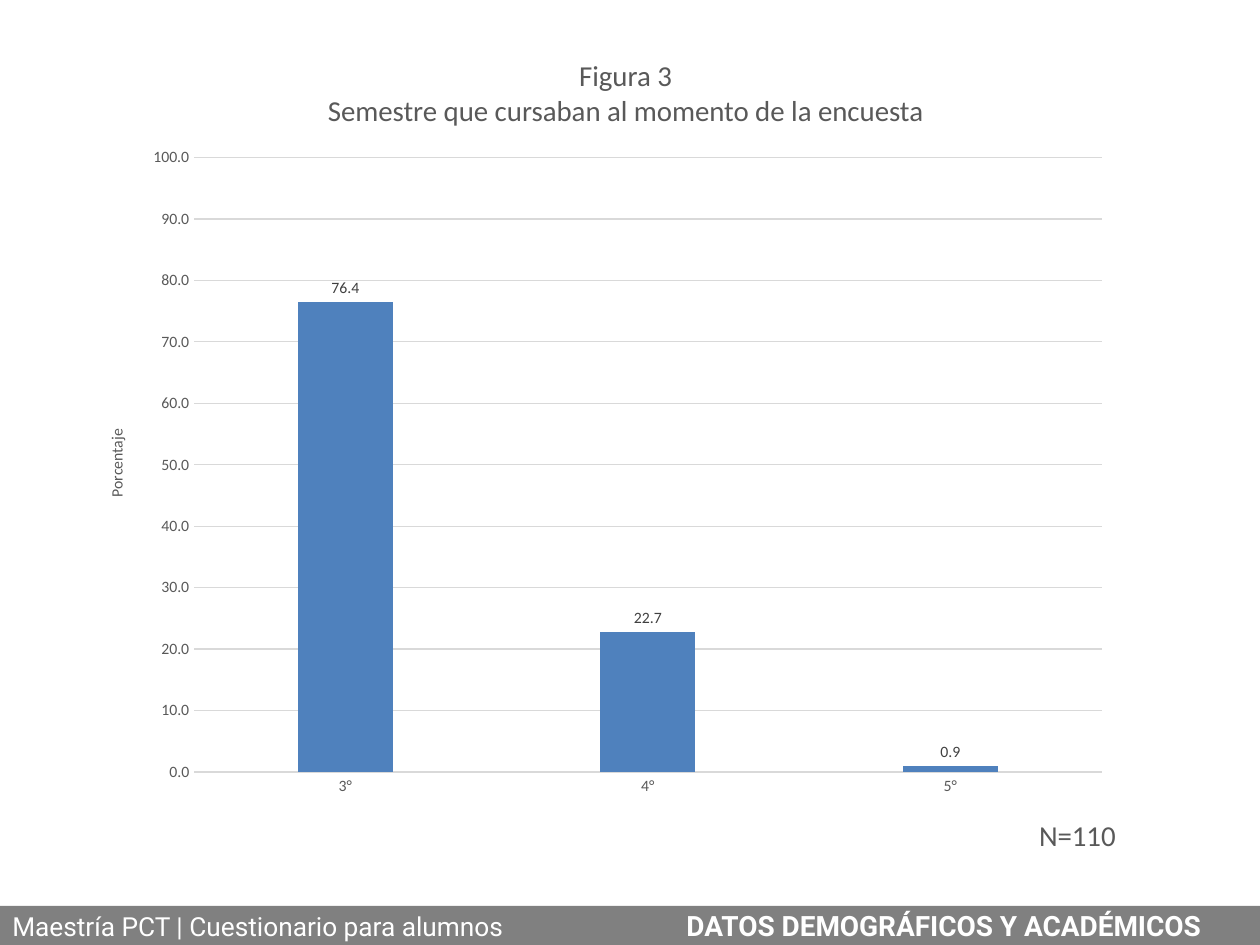
import pptx
import pptx.chart.data
import pptx.dml.color
import pptx.enum.chart
import pptx.enum.shapes
import pptx.enum.text
import pptx.oxml
import pptx.oxml.ns
import pptx.util

Pt = pptx.util.Pt
RGB = pptx.dml.color.RGBColor.from_string
ALIGN = pptx.enum.text.PP_ALIGN

THEME = {
    "text": RGB("595959"), "label": RGB("404040"), "grid": RGB("D9D9D9"),
    "bar": RGB("4F81BD"), "footer": RGB("808080"), "footer_text": RGB("FFFFFF"),
    "font": "Calibri", "footer_font": "Roboto",
    "title_size": Pt(16.5), "axis_size": Pt(9), "chart_size": Pt(10),
    "course_size": Pt(15), "section_size": Pt(16),
}

prs = pptx.Presentation()
prs.slide_width = pptx.util.Inches(10)
prs.slide_height = pptx.util.Inches(7.5)
W, H = prs.slide_width / 100, prs.slide_height / 100
s = prs.slides.add_slide(prs.slide_layouts[6])


def box(x, y, w, h):
    """Turn percentages of the slide's size into left, top, width, height."""
    return round(x * W), round(y * H), round(w * W), round(h * H)


def set_font(font, size, color, name=THEME["font"]):
    font.size, font.name = size, name
    font.color.rgb = color


# Captions: lines, place, size, rotation, wrap
captions = [
    (["N=110"], box(81.4, 85.87, 8.2, 5.07), THEME["title_size"], 0, False),
    (["Figura 3", "Semestre que cursaban al momento de la encuesta"],
     box(24.65, 5.47, 50, 8.8), THEME["title_size"], 0, False),
    (["Porcentaje"], box(4.6, 47.33, 9.3, 3.33), THEME["axis_size"], 270, True),
]
for lines, place, size, rotation, wrap in captions:
    sp = s.shapes.add_textbox(*place)
    sp.rotation = rotation
    tf = sp.text_frame
    tf.word_wrap = wrap
    tf.text = "\n".join(lines)
    for p in tf.paragraphs:
        p.alignment = ALIGN.CENTER
        set_font(p.font, size, THEME["text"])

# Footer band, with the section name at a tab stop
sp = s.shapes.add_shape(pptx.enum.shapes.MSO_SHAPE.RECTANGLE, *box(0, 95.87, 100, 4.13))
sp.shadow.inherit = False
sp.fill.solid()
sp.fill.fore_color.rgb = THEME["footer"]
sp.line.fill.background()
tf = sp.text_frame
tf.word_wrap = True
tf.vertical_anchor = pptx.enum.text.MSO_ANCHOR.MIDDLE
p = tf.paragraphs[0]
p.alignment = ALIGN.LEFT
tabs = pptx.oxml.parse_xml(
    f'<a:tabLst {pptx.oxml.ns.nsdecls("a")}><a:tab pos="{round(53.5 * W)}" algn="l"/></a:tabLst>')
p._p.get_or_add_pPr().append(tabs)
for text, size, bold in [
    ("Maestría PCT | Cuestionario para alumnos", THEME["course_size"], False),
    ("\tDATOS DEMOGRÁFICOS Y ACADÉMICOS", THEME["section_size"], True),
]:
    r = p.add_run()
    r.text = text
    r.font.bold = bold
    set_font(r.font, size, THEME["footer_text"], THEME["footer_font"])

# Column chart
data = pptx.chart.data.CategoryChartData(number_format="###0.0")
data.categories = ["3°", "4°", "5°"]
data.add_series("Porcentaje", [76.4, 22.7, 0.9])
chart = s.shapes.add_chart(
    pptx.enum.chart.XL_CHART_TYPE.COLUMN_CLUSTERED, *box(10.6, 14.27, 78.4, 71.33), data).chart
chart.has_title = False
chart.has_legend = False
set_font(chart.font, THEME["chart_size"], THEME["text"])

cat_axis, val_axis = chart.category_axis, chart.value_axis
for axis in (cat_axis, val_axis):
    axis.major_tick_mark = axis.minor_tick_mark = pptx.enum.chart.XL_TICK_MARK.NONE
    set_font(axis.tick_labels.font, THEME["axis_size"], THEME["text"])
val_axis.minimum_scale, val_axis.maximum_scale, val_axis.major_unit = 0, 100, 10
val_axis.tick_labels.number_format = "###0.0"
val_axis.tick_labels.number_format_is_linked = False
val_axis.format.line.fill.background()
for line in (cat_axis.format.line, val_axis.major_gridlines.format.line):
    line.color.rgb = THEME["grid"]
    line.width = Pt(0.75)

plot = chart.plots[0]
plot.vary_by_categories = False
plot.gap_width, plot.overlap = 219, -27
bars = plot.series[0]
bars.format.fill.solid()
bars.format.fill.fore_color.rgb = THEME["bar"]
labels = bars.data_labels
labels.show_value = True
labels.number_format = "###0.0"
labels.number_format_is_linked = False
labels.position = pptx.enum.chart.XL_LABEL_POSITION.OUTSIDE_END
set_font(labels.font, THEME["axis_size"], THEME["label"])

prs.save("out.pptx")
